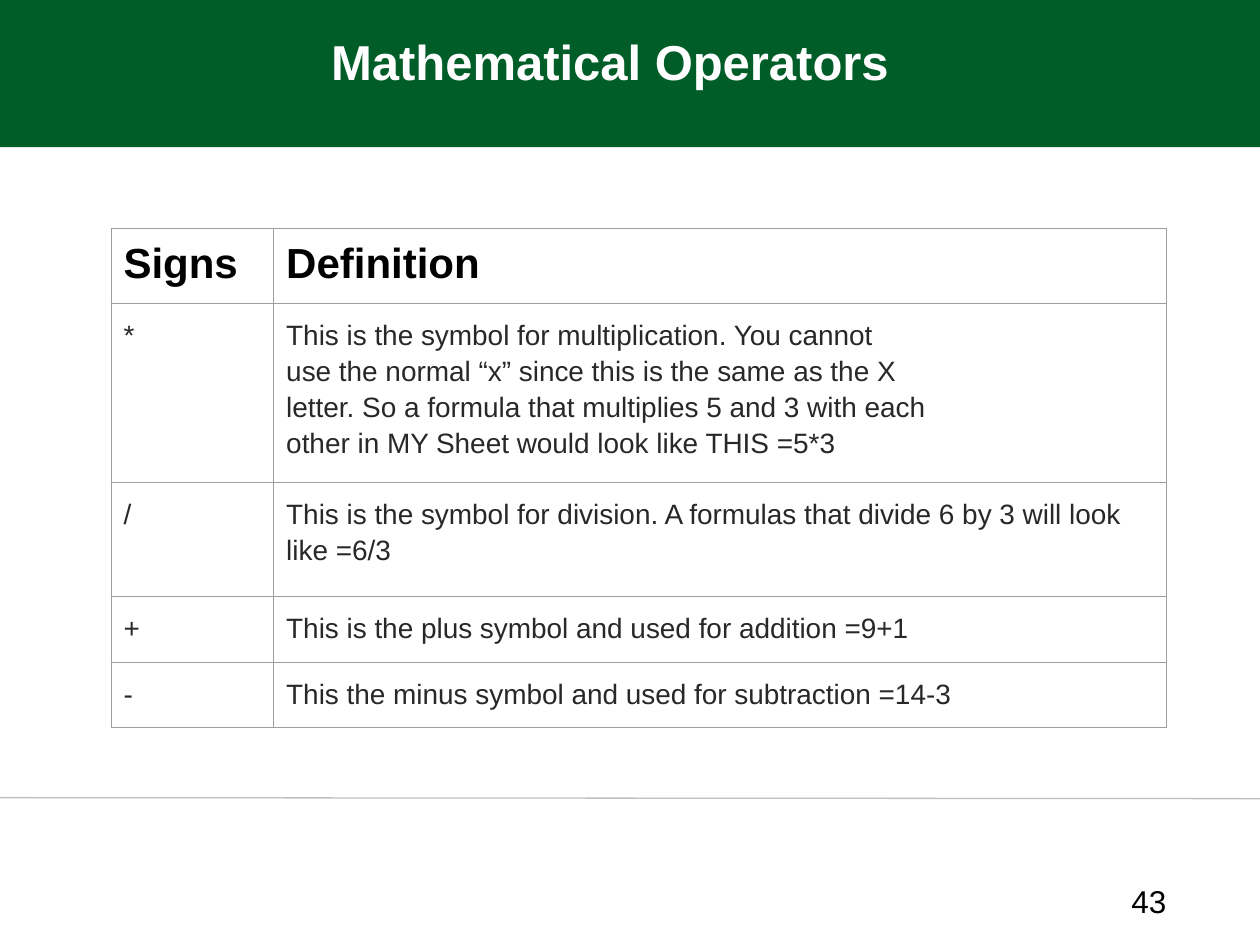
from lxml import etree
from pptx import Presentation
from pptx.dml.color import RGBColor
from pptx.enum.shapes import MSO_CONNECTOR, MSO_SHAPE
from pptx.enum.text import PP_ALIGN
from pptx.oxml.ns import qn
from pptx.util import Cm, Pt

LEFT, CENTER, JUSTIFY = PP_ALIGN.LEFT, PP_ALIGN.CENTER, PP_ALIGN.JUSTIFY
RECTANGLE, STRAIGHT = MSO_SHAPE.RECTANGLE, MSO_CONNECTOR.STRAIGHT

FONT = "Arial"
GREEN, WHITE, BLACK = "005D28", "FFFFFF", "000000"
BODY, BORDER, RULE = "26282A", "9E9E9E", "BFBFBF"

TITLE = "Mathematical Operators"
PAGE_NUMBER = "43"
HEADER = ("Signs", "Definition")
OPERATORS = [
    ("*", "This is the symbol for multiplication. You cannot\n"
          "use the normal “x” since this is the same as the X\n"
          "letter. So a formula that multiplies 5 and 3 with each\n"
          "other in MY Sheet would look like THIS =5*3"),
    ("/", "This is the symbol for division. A formulas that divide 6 by 3 will look like =6/3"),
    ("+", "This is the plus symbol and used for addition =9+1"),
    ("-", "This the minus symbol and used for subtraction =14-3"),
]
COLUMN_WIDTHS = (3.28, 18)
ROW_HEIGHTS = (1.45, 3.46, 2.3, 1.32, 1.32)


def color(value):
    return RGBColor.from_string(value)


def write(text_frame, text, size, text_color, bold=False, align=LEFT, spacing=1.0):
    text_frame.text = text
    for paragraph in text_frame.paragraphs:
        paragraph.alignment = align
        paragraph.line_spacing = spacing
        for run in paragraph.runs:
            run.font.name = FONT
            run.font.size = Pt(size)
            run.font.bold = bold
            run.font.color.rgb = color(text_color)


def add_text(slide, left, top, width, height, text, size, text_color, **style):
    box = slide.shapes.add_textbox(Cm(left), Cm(top), Cm(width), Cm(height))
    box.text_frame.word_wrap = True
    write(box.text_frame, text, size, text_color, **style)


def set_borders(cell):
    properties = cell._tc.get_or_add_tcPr()
    for side in ("a:lnL", "a:lnR", "a:lnT", "a:lnB"):
        line = etree.SubElement(properties, qn(side), w=str(Pt(0.75)))
        fill = etree.SubElement(line, qn("a:solidFill"))
        etree.SubElement(fill, qn("a:srgbClr"), val=BORDER)


def add_frame(slide, width):
    band = slide.shapes.add_shape(RECTANGLE, 0, 0, width, Cm(2.97))
    band.shadow.inherit = False
    band.fill.solid()
    band.fill.fore_color.rgb = color(GREEN)
    band.line.fill.background()
    rule = slide.shapes.add_connector(STRAIGHT, 0, Cm(16.08), width, Cm(16.1))
    rule.line.color.rgb = color(RULE)
    rule.line.width = Pt(0.75)
    etree.SubElement(rule._element.spPr, qn("a:effectLst"))


def add_operator_table(slide):
    rows = [HEADER] + OPERATORS
    table = slide.shapes.add_table(
        len(rows), len(HEADER), Cm(2.24), Cm(4.6),
        Cm(sum(COLUMN_WIDTHS)), Cm(sum(ROW_HEIGHTS))).table
    for column, width in zip(table.columns, COLUMN_WIDTHS):
        column.width = Cm(width)
    for row, height, texts in zip(table.rows, ROW_HEIGHTS, rows):
        row.height = Cm(height)
        for cell, text in zip(row.cells, texts):
            set_borders(cell)
            cell.fill.solid()
            cell.fill.fore_color.rgb = color(WHITE)
            cell.margin_left = cell.margin_right = Cm(0.25)
            cell.margin_top = cell.margin_bottom = Cm(0.25)
            if texts is HEADER:
                write(cell.text_frame, text, 24, BLACK, bold=True)
            else:
                align = JUSTIFY if "\n" in text else LEFT
                write(cell.text_frame, text, 16, BODY, align=align, spacing=1.15)


def main():
    presentation = Presentation()
    presentation.slide_width = Cm(25.4)
    presentation.slide_height = Cm(19.05)
    slide = presentation.slides.add_slide(presentation.slide_layouts[6])
    add_frame(slide, presentation.slide_width)
    add_text(slide, 22.56, 17.65, 2.2, 1.02, PAGE_NUMBER, 18, BLACK)
    add_text(slide, 1.07, 0.51, 22.45, 2.26, TITLE, 28, WHITE, bold=True, align=CENTER)
    add_operator_table(slide)
    presentation.save("out.pptx")


if __name__ == "__main__":
    main()
